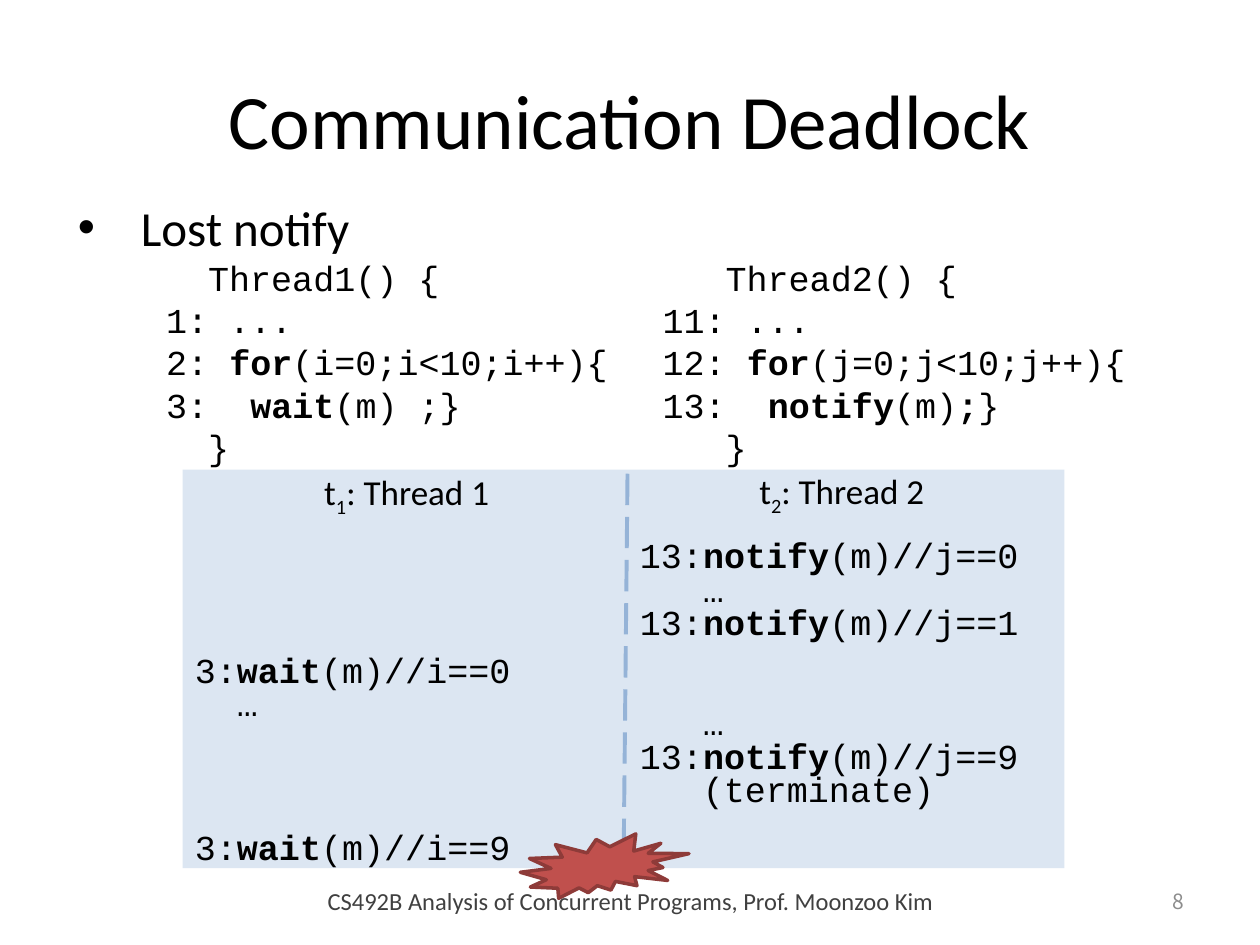
from collections import namedtuple

from pptx import Presentation
from pptx.dml.color import RGBColor
from pptx.enum.dml import MSO_LINE
from pptx.enum.shapes import MSO_CONNECTOR, MSO_SHAPE
from pptx.enum.text import MSO_ANCHOR, PP_ALIGN
from pptx.oxml.ns import qn
from pptx.util import Cm, Pt

RECTANGLE = MSO_SHAPE.RECTANGLE
BURST = MSO_SHAPE.EXPLOSION2
STRAIGHT = MSO_CONNECTOR.STRAIGHT
LONG_DASH = MSO_LINE.LONG_DASH
LEFT, CENTER, RIGHT = PP_ALIGN.LEFT, PP_ALIGN.CENTER, PP_ALIGN.RIGHT
TOP, MIDDLE = MSO_ANCHOR.TOP, MSO_ANCHOR.MIDDLE

SANS, MONO, NUMBER_FONT = "Calibri", "Courier New", "Noto Sans CJK KR"
TITLE_ONLY = 5
CODE_CHAR = Pt(12)  # advance of one 20 pt Courier New character
CODE_PITCH, TRACE_PITCH, HEADING_PITCH = 24.2, 19.2, 22

Box = namedtuple("Box", "left top width height")  # centimetres


def color(value):
    return RGBColor.from_string(value)


def place(shape, box):
    shape.left, shape.top, shape.width, shape.height = map(Cm, box)


def write(para, text, font=SANS, size=20, ink="000000", align=LEFT,
          pitch=None, before=0, indent=0):
    """Fill a paragraph; *word* is bold and _x_ is a subscript."""
    para.alignment = align
    para.space_before = Pt(before)
    if pitch:
        para.line_spacing = Pt(pitch)
    if indent:
        para._p.get_or_add_pPr().set("marL", str(indent * CODE_CHAR))
    mark = "_" if "_" in text else "*"
    for index, piece in enumerate(text.split(mark)):
        if not piece:
            continue
        span = para.add_run()
        span.text = piece
        span.font.name, span.font.size = font, Pt(size)
        span.font.color.rgb = color(ink)
        marked = index % 2 == 1
        span.font.bold = marked and mark == "*"
        if marked and mark == "_":
            span._r.get_or_add_rPr().set("baseline", "-25000")


def add_frame(page, box, anchor=TOP):
    frame = page.shapes.add_textbox(*map(Cm, box)).text_frame
    frame.word_wrap = True
    frame.vertical_anchor = anchor
    return frame


def add_shape(page, kind, box, fill, line=None):
    shape = page.shapes.add_shape(kind, *map(Cm, box))
    shape.shadow.inherit = False
    shape.fill.solid()
    shape.fill.fore_color.rgb = color(fill)
    if line:
        shape.line.color.rgb = color(line)
        shape.line.width = Pt(2)
    else:
        shape.line.fill.background()


def add_title(page, box, text):
    title = page.shapes.title
    place(title, box)
    title.text_frame.vertical_anchor = MIDDLE
    write(title.text_frame.paragraphs[0], text, size=44, align=CENTER)


def add_bullet(page, box, text):
    para = add_frame(page, box).paragraphs[0]
    write(para, text, size=28)
    properties = para._p.get_or_add_pPr()
    properties.set("marL", str(Cm(1.27)))
    properties.set("indent", str(-Cm(1.27)))
    bullet_font = properties.makeelement(qn("a:buFont"), {"typeface": "Arial"})
    bullet = properties.makeelement(qn("a:buChar"), {"char": "•"})
    properties.extend([bullet_font, bullet])


def add_code(page, box, lines, indent):
    """Write a listing whose first and last lines are indented."""
    frame = add_frame(page, box)
    for index, line in enumerate(lines):
        para = frame.add_paragraph() if index else frame.paragraphs[0]
        outer = index in (0, len(lines) - 1)
        write(para, line, font=MONO, pitch=CODE_PITCH,
              indent=indent if outer else 0)


def add_trace(page, box, heading, steps):
    """Write a thread's heading and its steps: text, indent, space before."""
    frame = add_frame(page, box)
    write(frame.paragraphs[0], heading, align=CENTER, pitch=HEADING_PITCH)
    for text, indent, before in steps:
        write(frame.add_paragraph(), text, font=MONO, pitch=TRACE_PITCH,
              indent=indent, before=before)


def add_schedule(page, box):
    """Draw the panel that shows how the two threads interleave."""
    add_shape(page, RECTANGLE, box, "DCE6F2")
    add_trace(page, Box(box.left, box.top + 0.08, 9.04, box.height - 0.08),
              "t_1_: Thread 1",
              [("3:*wait*(m)//i==0", 0, 79),
               ("…", 2, 0),
               ("3:*wait*(m)//i==9", 0, 63)])
    add_trace(page, Box(box.left + 8.97, box.top + 0.06, 8.64, 7.52),
              "t_2_: Thread 2",
              [("13:*notify*(m)//j==0", 0, 14),
               ("…", 3, 0),
               ("13:*notify*(m)//j==1", 0, 0),
               ("…", 3, 38),
               ("13:*notify*(m)//j==9", 0, 0),
               ("(terminate)", 3, 0)])
    divider = page.shapes.add_connector(
        STRAIGHT, Cm(box.left + 8.97), Cm(box.top + 0.08),
        Cm(box.left + 8.89), Cm(box.top + box.height))
    divider.line.color.rgb = color("95B3D7")
    divider.line.width = Pt(2.25)
    divider.line.dash_style = LONG_DASH
    properties = divider._element.spPr
    properties.append(properties.makeelement(qn("a:effectLst"), {}))
    add_shape(page, BURST, Box(box.left + 6.81, box.top + 7.34, 3.4, 1.3),
              "C0504D", "8E3B39")


def add_footer(page, box, text, number):
    write(add_frame(page, Box(box.left + 16.18, box.top, 2.64, box.height),
                    MIDDLE).paragraphs[0],
          number, font=NUMBER_FONT, size=12, ink="8C8C8C", align=RIGHT)
    write(add_frame(page, box, MIDDLE).paragraphs[0],
          text, size=14, ink="404040", align=CENTER)


def main():
    deck = Presentation()
    deck.slide_width, deck.slide_height = Cm(25.4), Cm(19.05)
    page = deck.slides.add_slide(deck.slide_layouts[TITLE_ONLY])
    add_title(page, Box(1.27, 1.27, 22.86, 2.26), "Communication Deadlock")
    add_schedule(page, Box(3.68, 9.47, 17.78, 8.03))
    add_code(page, Box(3.1, 5.03, 9.6, 4.52),
             ["Thread1() {", "1: ...", "2: *for*(i=0;i<10;i++){",
              "3:  *wait*(m) ;}", "}"], indent=2)
    add_code(page, Box(13.11, 5.03, 10.39, 4.52),
             ["Thread2() {", "11: ...", "12: *for*(j=0;j<10;j++){",
              "13:  *notify*(m)*;*}", "}"], indent=3)
    add_bullet(page, Box(1.32, 3.86, 8.79, 1.45), "Lost notify")
    add_footer(page, Box(5.31, 17.65, 14.81, 1.02),
               "CS492B Analysis of Concurrent Programs, Prof. Moonzoo Kim", "8")
    deck.save("out.pptx")


if __name__ == "__main__":
    main()
